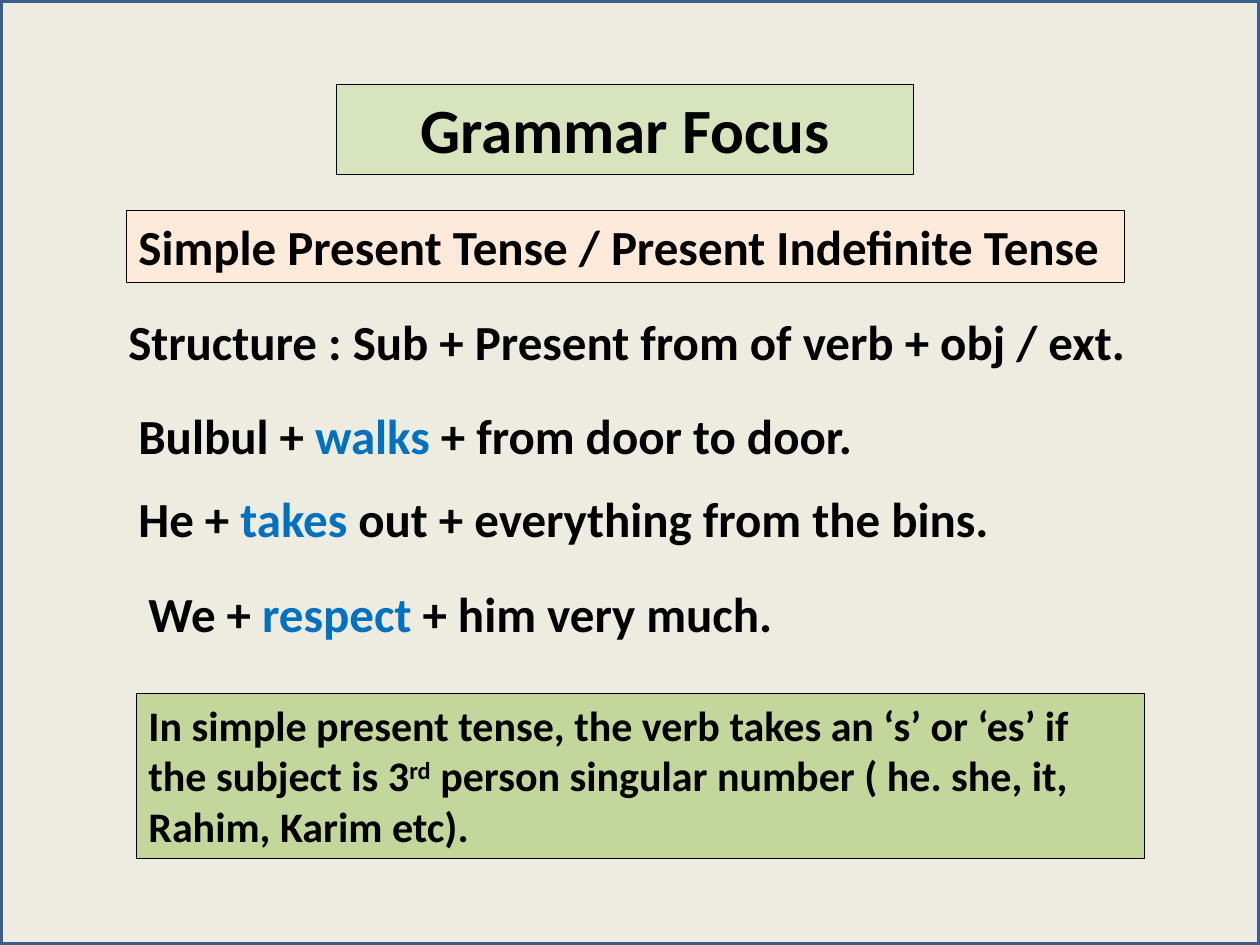
import pptx
import pptx.dml.color
import pptx.enum.shapes
import pptx.enum.text
import pptx.util

Inches = pptx.util.Inches
RGBColor = pptx.dml.color.RGBColor
RECTANGLE = pptx.enum.shapes.MSO_SHAPE.RECTANGLE
ALIGN = pptx.enum.text.PP_ALIGN

BLACK = RGBColor(0x00, 0x00, 0x00)
VERB_BLUE = RGBColor(0x00, 0x70, 0xC0)
CREAM = RGBColor(0xEE, 0xEC, 0xE1)
PALE_GREEN = RGBColor(0xD7, 0xE4, 0xBD)
PEACH = RGBColor(0xFD, 0xEA, 0xDA)
GREEN = RGBColor(0xC3, 0xD6, 0x9B)
FRAME_BLUE = RGBColor(0x3A, 0x5F, 0x8C)


def add_run(paragraph, text, size=28, color=BLACK, superscript=False):
    run = paragraph.add_run()
    run.text = text
    run.font.name = "Calibri"
    run.font.size = pptx.util.Pt(size)
    run.font.bold = True
    run.font.color.rgb = color
    if superscript:
        run.font._element.set("baseline", "30000")


def add_text_box(slide, box, fill=None, align=ALIGN.LEFT):
    """Add a text box, outlined when filled, and return its first paragraph."""
    shape = slide.shapes.add_textbox(*map(Inches, box))
    if fill is not None:
        shape.fill.solid()
        shape.fill.fore_color.rgb = fill
        shape.line.color.rgb = BLACK
        shape.line.width = pptx.util.Pt(0.25)
    shape.text_frame.word_wrap = True
    shape.text_frame.auto_size = pptx.enum.text.MSO_AUTO_SIZE.SHAPE_TO_FIT_TEXT
    paragraph = shape.text_frame.paragraphs[0]
    paragraph.alignment = align
    return paragraph


def add_headings(slide, title_box, tense_box, structure_box):
    title = add_text_box(slide, title_box, PALE_GREEN, ALIGN.CENTER)
    add_run(title, "Grammar Focus", size=36)
    tense = add_text_box(slide, tense_box, PEACH)
    add_run(tense, "Simple Present Tense / Present Indefinite Tense")
    structure = add_text_box(slide, structure_box)
    add_run(structure, "Structure : Sub + Present from of verb + obj / ext.")


def add_example(slide, box, subject, verb, rest):
    """Add an example sentence with its verb highlighted."""
    paragraph = add_text_box(slide, box)
    add_run(paragraph, subject)
    add_run(paragraph, verb, color=VERB_BLUE)
    add_run(paragraph, rest)


def add_rule_note(slide, box):
    paragraph = add_text_box(slide, box, GREEN)
    add_run(paragraph, "In simple present tense, the verb takes an ‘s’ or ‘es’ "
                       "if the subject is 3", size=24)
    add_run(paragraph, "rd", size=24, superscript=True)
    add_run(paragraph, " person singular number ( he. she, it, Rahim, Karim etc).",
            size=24)


def add_frame(slide, box):
    frame = slide.shapes.add_shape(RECTANGLE, *map(Inches, box))
    frame.shadow.inherit = False
    frame.fill.background()
    frame.line.color.rgb = FRAME_BLUE
    frame.line.width = pptx.util.Pt(3)


def main():
    presentation = pptx.Presentation()
    presentation.slide_width = Inches(10)
    presentation.slide_height = Inches(7.5)
    slide = presentation.slides.add_slide(presentation.slide_layouts[6])
    slide.background.fill.solid()
    slide.background.fill.fore_color.rgb = CREAM

    add_headings(slide, (2.67, 0.67, 4.58, 0.71), (1, 1.67, 7.92, 0.57),
                 (0.92, 2.42, 8.33, 0.57))
    examples = [
        ((1, 3.17, 7.83, 0.57), "Bulbul + ", "walks", " + from door to door."),
        ((1, 3.83, 7.92, 0.57), "He + ", "takes", " out + everything from the bins."),
        ((1.08, 4.58, 6.33, 0.57), "We + ", "respect ", "+ him very much."),
    ]
    for box, subject, verb, rest in examples:
        add_example(slide, box, subject, verb, rest)
    add_rule_note(slide, (1.08, 5.5, 8, 1.31))
    add_frame(slide, (0, 0, 10, 7.5))
    presentation.save("out.pptx")


if __name__ == "__main__":
    main()
